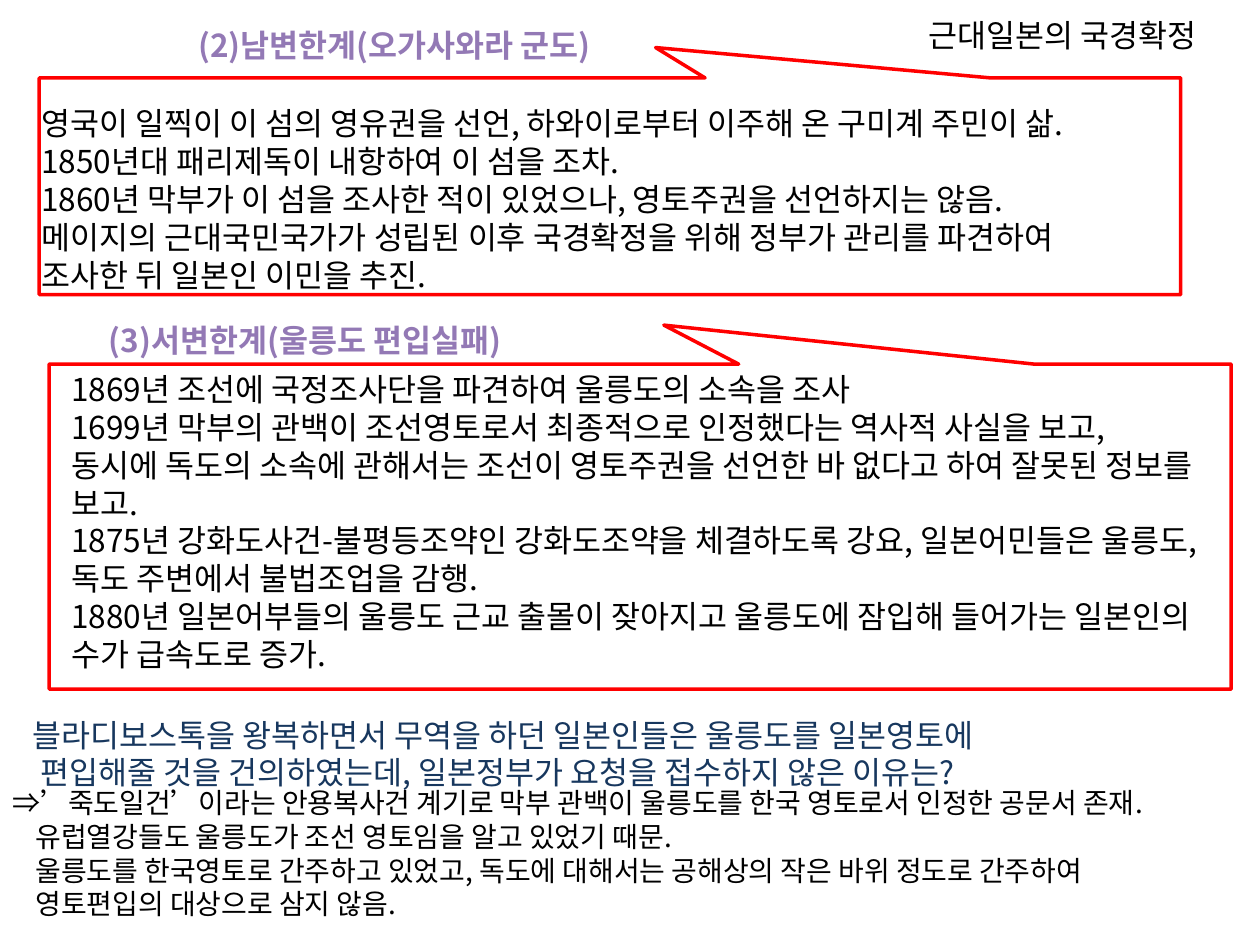
from lxml.etree import SubElement
from pptx import Presentation
from pptx.dml.color import RGBColor
from pptx.enum.shapes import MSO_SHAPE
from pptx.enum.text import MSO_ANCHOR, MSO_AUTO_SIZE, PP_ALIGN
from pptx.oxml.ns import qn
from pptx.util import Cm, Pt

FONT = "Noto Sans CJK KR"
BLACK, RED, PURPLE, NAVY = "000000", "FF0000", "9379B5", "17375E"

SOUTH_LINES = [
    "영국이 일찍이 이 섬의 영유권을 선언, 하와이로부터 이주해 온 구미계 주민이 삶.",
    "1850년대 패리제독이 내항하여 이 섬을 조차.",
    "1860년 막부가 이 섬을 조사한 적이 있었으나, 영토주권을 선언하지는 않음.",
    "메이지의 근대국민국가가 성립된 이후 국경확정을 위해 정부가 관리를 파견하여",
    "조사한 뒤 일본인 이민을 추진.",
]
WEST_LINES = [
    "1869년 조선에 국정조사단을 파견하여 울릉도의 소속을 조사",
    "1699년 막부의 관백이 조선영토로서 최종적으로 인정했다는 역사적 사실을 보고, "
    "동시에 독도의 소속에 관해서는 조선이 영토주권을 선언한 바 없다고 하여 잘못된 정보를 보고.",
    "1875년 강화도사건-불평등조약인 강화도조약을 체결하도록 강요, "
    "일본어민들은 울릉도, 독도 주변에서 불법조업을 감행.",
    "1880년 일본어부들의 울릉도 근교 출몰이 잦아지고 울릉도에 잠입해 들어가는 "
    "일본인의 수가 급속도로 증가.",
]
QUESTION_LINES = [
    "블라디보스톡을 왕복하면서 무역을 하던 일본인들은 울릉도를 일본영토에",
    "편입해줄 것을 건의하였는데, 일본정부가 요청을 접수하지 않은 이유는?",
]
ANSWER_LINES = [
    "⇒’죽도일건’이라는 안용복사건 계기로 막부 관백이 울릉도를 한국 영토로서 인정한 공문서 존재.",
    "유럽열강들도 울릉도가 조선 영토임을 알고 있었기 때문.",
    "울릉도를 한국영토로 간주하고 있었고, 독도에 대해서는 공해상의 작은 바위 정도로 간주하여",
    "영토편입의 대상으로 삼지 않음.",
]


def color(value):
    """Return the colour for a hex string."""
    return RGBColor.from_string(value)


def place(shape, left, top, width, height):
    """Move and size a shape in centimetres."""
    shape.left, shape.top = Cm(left), Cm(top)
    shape.width, shape.height = Cm(width), Cm(height)


def write(box, lines, size=18, fill=BLACK, bold=False, align=PP_ALIGN.LEFT, indent=0):
    """Write one paragraph per line, indenting those after the first."""
    frame = box.text_frame
    frame.word_wrap = True
    frame.auto_size = MSO_AUTO_SIZE.NONE
    frame.vertical_anchor = MSO_ANCHOR.TOP
    for number, line in enumerate(lines):
        para = frame.paragraphs[0] if number == 0 else frame.add_paragraph()
        para.alignment = align
        if number and indent:
            para._p.get_or_add_pPr().set("marL", str(Cm(indent)))
        span = para.add_run()
        span.text = line
        span.font.name = FONT
        span.font.size = Pt(size)
        span.font.bold = bold
        span.font.color.rgb = color(fill)
        SubElement(span._r.get_or_add_rPr(), qn("a:ea")).set("typeface", FONT)


def add_text(page, position, lines, **style):
    """Add a text box with formatted lines."""
    box = page.shapes.add_textbox(*map(Cm, position))
    write(box, lines, **style)


def add_heading(page, left, top, text):
    """Add a centred purple section heading."""
    add_text(page, (left, top, 10.72, 1.02), [text],
             fill=PURPLE, bold=True, align=PP_ALIGN.CENTER)


def add_callout(page, position, pointer):
    """Add an upturned red callout outline with its pointer offsets."""
    callout = page.shapes.add_shape(MSO_SHAPE.RECTANGULAR_CALLOUT, *map(Cm, position))
    callout.rotation = 180
    for index, offset in enumerate(pointer):
        callout.adjustments[index] = offset
    callout.shadow.inherit = False
    callout.fill.background()
    callout.line.color.rgb = color(RED)
    callout.line.width = Pt(2)


def main():
    """Build the slide and save the deck."""
    deck = Presentation()
    deck.slide_width, deck.slide_height = Cm(25.4), Cm(19.05)
    page = deck.slides.add_slide(deck.slide_layouts[5])

    place(page.shapes.title, 18.47, 0.2, 6.5, 1.02)
    write(page.shapes.title, ["근대일본의 국경확정"])

    add_heading(page, 2.59, 0.41, "(2)남변한계(오가사와라 군도)")
    add_callout(page, (0.79, 1.57, 23.01, 4.37), (-0.04, 0.64))
    add_text(page, (0.58, 1.98, 23.83, 4.11), SOUTH_LINES)

    add_heading(page, 0.79, 6.35, "(3)서변한계(울릉도 편입실패)")
    add_callout(page, (0.99, 7.34, 23.83, 6.55), (-0.02, 0.62))
    add_text(page, (1.19, 7.34, 23.22, 6.4), WEST_LINES)

    add_text(page, (0.41, 14.3, 21.74, 1.8), QUESTION_LINES, fill=NAVY, indent=0.16)
    add_text(page, (0, 15.72, 26.82, 3), ANSWER_LINES, size=16, indent=0.47)
    deck.save("out.pptx")


if __name__ == "__main__":
    main()
